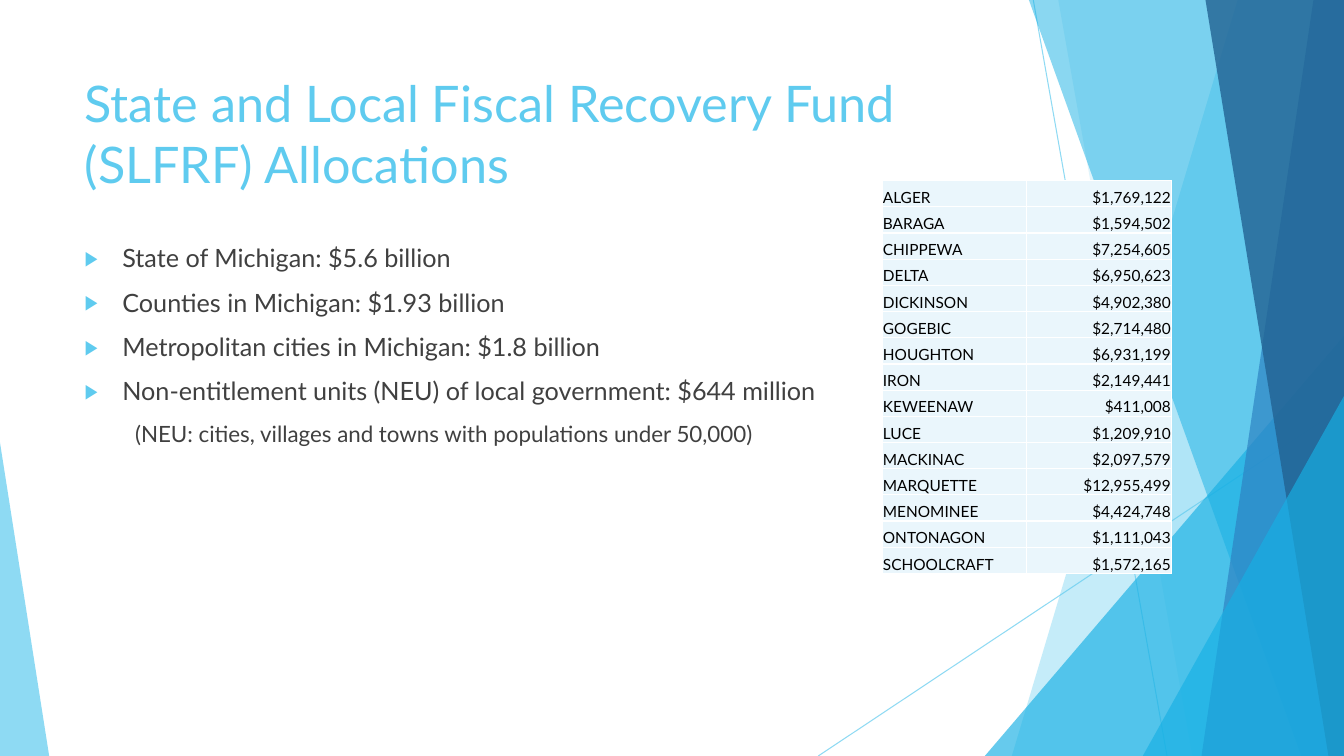
from dataclasses import dataclass
from typing import Any

from lxml.etree import SubElement
from pptx import Presentation
from pptx.dml.color import RGBColor
from pptx.enum.shapes import MSO_CONNECTOR as Connector, MSO_SHAPE as Preset
from pptx.enum.text import MSO_ANCHOR as Anchor, MSO_AUTO_SIZE as AutoSize, PP_ALIGN as Align
from pptx.oxml.ns import qn
from pptx.util import Cm, Pt

COLORS = {
    "sky": "5FCBEF",
    "cyan": "17B0E4",
    "blue": "2E83C3",
    "navy": "226292",
    "text": "404040",
    "cell": "EAF6FC",
    "black": "000000",
    "white": "FFFFFF",
}
FONT = "Lato"
WIDTH, HEIGHT = 33.87, 19.05


@dataclass
class Ray:
    x1: float
    y1: float
    x2: float
    y2: float


@dataclass
class Band:
    top_x: float
    bottom_x: float
    color: str
    opacity: int


@dataclass
class Wedge:
    left: float
    top: float
    width: float
    peak: float
    color: str
    opacity: int


@dataclass
class Point:
    text: str
    size: int = 18
    level: int = 0
    margin: float = 0.95
    bulleted: bool = True


RAYS = [Ray(26.04, 0, 29.41, HEIGHT), Ray(WIDTH, 10.24, 20.62, HEIGHT)]
FACETS = [
    Band(31.19, 25.5, "sky", 36),
    Band(26.67, 30.05, "sky", 20),
    Wedge(24.82, 8.46, 9.05, 1, "cyan", 66),
    Band(25.93, 32.79, "cyan", 50),
    Band(33.1, 30.28, "blue", 70),
    Band(30.38, 33.48, "navy", 80),
    Wedge(28.8, 9.98, 5.07, 1, "cyan", 66),
    Wedge(0, 11.15, 1.24, 0, "sky", 70),
]
POINTS = [
    Point("State of Michigan: $5.6 billion"),
    Point("Counties in Michigan: $1.93 billion"),
    Point("Metropolitan cities in Michigan: $1.8 billion"),
    Point("Non-entitlement units (NEU) of local government: $644 million"),
    Point("(NEU: cities, villages and towns with populations under 50,000)", 16, 1, 1.27, False),
]
ALLOCATIONS = {
    "ALGER": 1769122,
    "BARAGA": 1594502,
    "CHIPPEWA": 7254605,
    "DELTA": 6950623,
    "DICKINSON": 4902380,
    "GOGEBIC": 2714480,
    "HOUGHTON": 6931199,
    "IRON": 2149441,
    "KEWEENAW": 411008,
    "LUCE": 1209910,
    "MACKINAC": 2097579,
    "MARQUETTE": 12955499,
    "MENOMINEE": 4424748,
    "ONTONAGON": 1111043,
    "SCHOOLCRAFT": 1572165,
}
COUNTY_WIDTHS = (3.63, 3.67)
ROW_HEIGHT = 0.66

FRAME_FORMAT = {"word_wrap": True, "auto_size": AutoSize.NONE, "vertical_anchor": Anchor.TOP}
CELL_FORMAT = {
    "vertical_anchor": Anchor.BOTTOM,
    "margin_left": Cm(0.02),
    "margin_right": Cm(0.02),
    "margin_top": Cm(0.02),
    "margin_bottom": 0,
}
PLAIN_TABLE = {"first_row": False, "horz_banding": False}


def apply(target: Any, values: dict[str, Any]) -> None:
    for name, value in values.items():
        setattr(target, name, value)


def rgb(color: str) -> RGBColor:
    return RGBColor.from_string(COLORS[color])


def style_font(font: Any, size: int, color: str) -> None:
    apply(font, {"name": FONT, "size": Pt(size), "bold": False})
    font.color.rgb = rgb(color)


def set_opacity(element: Any, percent: int) -> None:
    SubElement(next(element.iter(qn("a:srgbClr"))), qn("a:alpha"), val=str(percent * 1000))


def draw_ray(shapes: Any, ray: Ray) -> None:
    line = shapes.add_connector(
        Connector.STRAIGHT, Cm(ray.x1), Cm(ray.y1), Cm(ray.x2), Cm(ray.y2)
    )
    line.line.width = Pt(0.75)
    line.line.color.rgb = rgb("sky")
    properties = line._element.spPr
    set_opacity(properties, 70)
    SubElement(properties, qn("a:effectLst"))


def draw_facet(shapes: Any, facet: Band | Wedge) -> None:
    if isinstance(facet, Band):
        outline = shapes.build_freeform(Cm(facet.top_x), 0)
        corners = [(WIDTH, 0), (WIDTH, HEIGHT), (facet.bottom_x, HEIGHT)]
        outline.add_line_segments([(Cm(x), Cm(y)) for x, y in corners])
        shape = outline.convert_to_shape()
    else:
        shape = shapes.add_shape(
            Preset.ISOSCELES_TRIANGLE,
            Cm(facet.left), Cm(facet.top), Cm(facet.width), Cm(HEIGHT - facet.top),
        )
        shape.adjustments[0] = facet.peak
    shape.shadow.inherit = False
    shape.line.fill.background()
    shape.fill.solid()
    shape.fill.fore_color.rgb = rgb(facet.color)
    set_opacity(shape._element.spPr, facet.opacity)


def place(holder: Any, top: float, height: float) -> None:
    box = {"left": Cm(1.88), "top": Cm(top), "width": Cm(23.88), "height": Cm(height)}
    apply(holder, box)
    apply(holder.text_frame, FRAME_FORMAT)
    tree = holder._element.getparent()
    tree.append(holder._element)


def write_point(paragraph: Any, point: Point) -> None:
    apply(paragraph, {"text": point.text, "level": point.level, "space_before": Pt(10)})
    style_font(paragraph.runs[0].font, point.size, "text")
    properties = paragraph._p.get_or_add_pPr()
    properties.set("marL", str(Cm(point.margin)))
    properties.set("indent", str(-Cm(point.margin) if point.bulleted else 0))
    if point.bulleted:
        bullet_color = SubElement(properties, qn("a:buClr"))
        SubElement(bullet_color, qn("a:srgbClr"), val=COLORS["sky"])
        SubElement(properties, qn("a:buSzPct"), val="80000")
        SubElement(properties, qn("a:buFont"), typeface=FONT)
        SubElement(properties, qn("a:buChar"), char="▶")
    else:
        SubElement(properties, qn("a:buNone"))


def write_cell(cell: Any, text: str, align: Align) -> None:
    apply(cell, {"text": text, **CELL_FORMAT})
    paragraph = cell.text_frame.paragraphs[0]
    paragraph.alignment = align
    style_font(paragraph.runs[0].font, 11, "black")
    properties = cell._tc.get_or_add_tcPr()
    for side in ("a:lnL", "a:lnR", "a:lnT", "a:lnB"):
        border = SubElement(properties, qn(side), w=str(Pt(1)))
        SubElement(SubElement(border, qn("a:solidFill")), qn("a:srgbClr"), val=COLORS["white"])
    cell.fill.solid()
    cell.fill.fore_color.rgb = rgb("cell")


def draw_allocations(shapes: Any) -> None:
    count = len(ALLOCATIONS)
    table = shapes.add_table(
        count, 2, Cm(22.23), Cm(4.55), Cm(sum(COUNTY_WIDTHS)), Cm(ROW_HEIGHT * count)
    ).table
    apply(table, PLAIN_TABLE)
    for column, width in zip(table.columns, COUNTY_WIDTHS):
        column.width = Cm(width)
    for row, (county, amount) in zip(table.rows, ALLOCATIONS.items()):
        row.height = Cm(ROW_HEIGHT)
        write_cell(row.cells[0], county, Align.LEFT)
        write_cell(row.cells[1], f"${amount:,}", Align.RIGHT)


def main() -> None:
    deck = Presentation()
    apply(deck, {"slide_width": Cm(WIDTH), "slide_height": Cm(HEIGHT)})
    slide = deck.slides.add_slide(deck.slide_layouts[1])
    title, body = slide.placeholders
    for ray in RAYS:
        draw_ray(slide.shapes, ray)
    for facet in FACETS:
        draw_facet(slide.shapes, facet)

    place(title, 1.7, 3.66)
    title.text_frame.text = "State and Local Fiscal Recovery Fund (SLFRF) Allocations"
    heading = title.text_frame.paragraphs[0]
    heading.alignment = Align.LEFT
    style_font(heading.runs[0].font, 36, "sky")

    place(body, 5.99, 10.77)
    for index, point in enumerate(POINTS):
        frame = body.text_frame
        write_point(frame.add_paragraph() if index else frame.paragraphs[0], point)

    draw_allocations(slide.shapes)
    deck.save("out.pptx")


if __name__ == "__main__":
    main()
